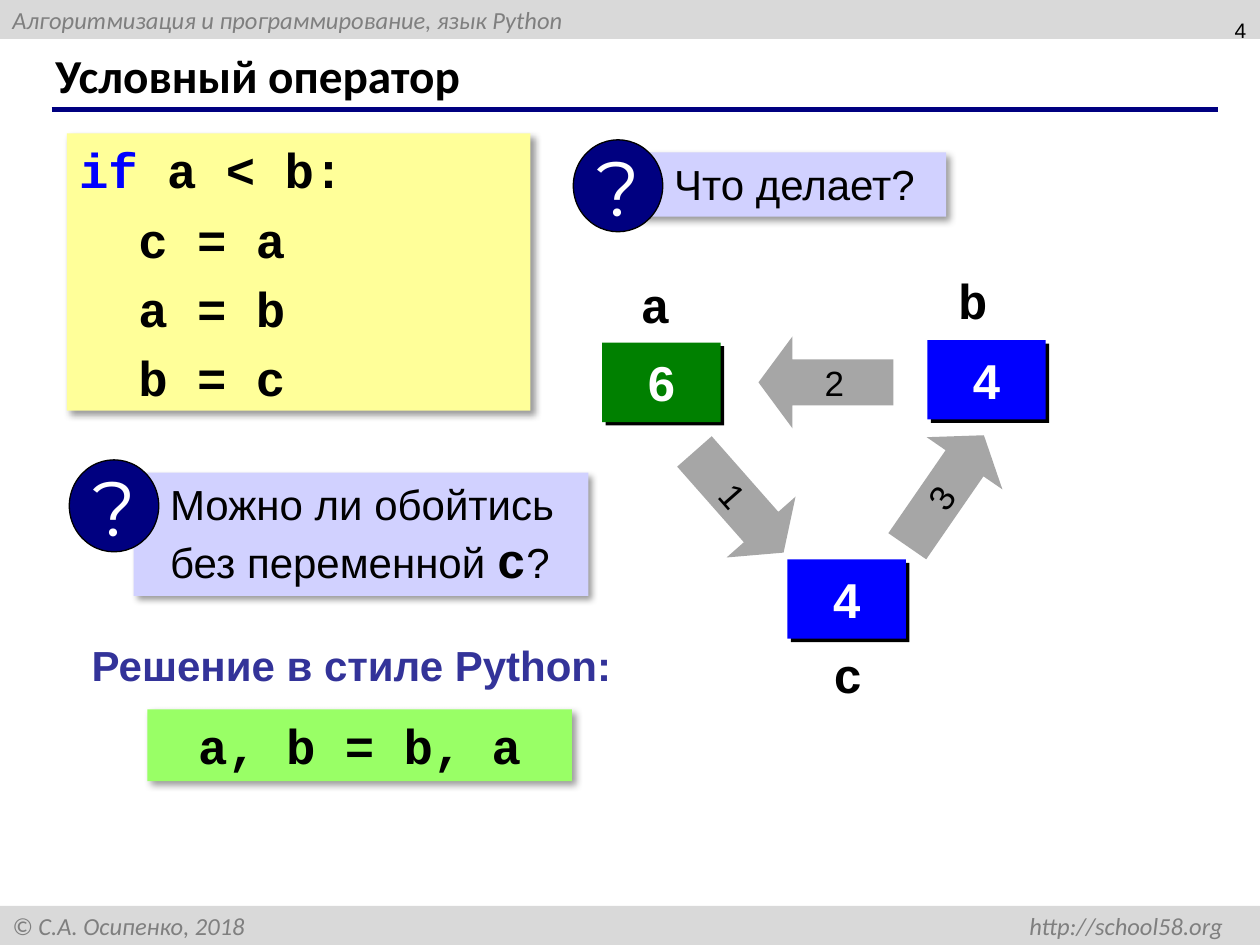
import pptx
import pptx.util
import pptx.dml.color
import pptx.enum.shapes
import pptx.enum.text
import pptx.oxml
import pptx.oxml.ns

Inches = pptx.util.Inches
Kind = pptx.enum.shapes.MSO_SHAPE
Align = pptx.enum.text.PP_ALIGN
Anchor = pptx.enum.text.MSO_ANCHOR
NS = pptx.oxml.ns.nsdecls("a")
HUES = {
    "bar": "D9D9D9", "gray": "7F7F7F", "navy": "000080", "black": "000000",
    "white": "FFFFFF", "yellow": "FFFF99", "blue": "0000FF", "lilac": "D1D1FF",
    "green": "008000", "arrow": "A6A6A6", "lime": "99FF66", "indigo": "333399",
}
SOFT = dict(alpha=40, blur=4, dist=3)
HARD = dict(alpha=100, blur=0, dist=2.8)
CODE = dict(font="Courier New", size=28, bold=True)


def hue(name):
    """Return the named colour."""
    return pptx.dml.color.RGBColor.from_string(HUES[name])


def shade(shape, alpha, blur, dist):
    """Give a shape an outer shadow towards the lower right."""
    shape._element.spPr.find(pptx.oxml.ns.qn("a:effectLst")).append(pptx.oxml.parse_xml(
        f'<a:outerShdw {NS} blurRad="{pptx.util.Pt(blur)}" dist="{pptx.util.Pt(dist)}" '
        f'dir="2700000" algn="tl" rotWithShape="0"><a:srgbClr val="{HUES["black"]}">'
        f'<a:alpha val="{alpha * 1000}"/></a:srgbClr></a:outerShdw>'))


def form(shapes, kind, box, fill, line=None, cast=None):
    """Add a filled preset shape."""
    shape = shapes.add_shape(kind, *map(Inches, box))
    shape.shadow.inherit = False
    shape.fill.solid()
    shape.fill.fore_color.rgb = hue(fill)
    if line:
        shape.line.color.rgb = hue(line)
        shape.line.width = pptx.util.Pt(0.75)
    else:
        shape.line.fill.background()
    if cast:
        shade(shape, **cast)
    return shape


def write(shape, rows, font="Arial", size=24, color="black", bold=False, italic=False,
          align=Align.LEFT, anchor=Anchor.MIDDLE, wrap=True, left=0.1, before=0):
    """Fill a shape with rows; a row is a string or a list of (text, changes)."""
    frame = shape.text_frame
    frame.word_wrap = wrap
    frame.vertical_anchor = anchor
    frame.margin_left = Inches(left)
    for i, row in enumerate(rows):
        para = frame.paragraphs[0] if i == 0 else frame.add_paragraph()
        para.alignment = align
        para.space_before = pptx.util.Pt(before)
        for text, diff in [(row, {})] if isinstance(row, str) else row:
            look = dict(font=font, size=size, color=color, bold=bold) | diff
            run = para.add_run()
            run.text = text
            run.font.name = look["font"]
            run.font.size = pptx.util.Pt(look["size"])
            run.font.color.rgb = hue(look["color"])
            run.font.bold = look["bold"]
            run.font.italic = italic
    return frame


def label(shapes, box, text, **fmt):
    """Add a text box with one row."""
    write(shapes.add_textbox(*map(Inches, box)), [text], **fmt)


def band(shapes, box, text, tab=None):
    """Draw a gray strip with slanted text and an optional right tab stop."""
    frame = write(form(shapes, Kind.RECTANGLE, box, "bar"), [text],
                  font="Calibri", size=14, color="gray", italic=True)
    if tab:
        frame.paragraphs[0]._p.get_or_add_pPr().append(pptx.oxml.parse_xml(
            f'<a:tabLst {NS}><a:tab pos="{Inches(tab)}" algn="r"/></a:tabLst>'))


def head(slide, box):
    """Place the title and the rule beneath it."""
    x, y, w, h = box
    title = slide.shapes.title
    title.left, title.top, title.width, title.height = map(Inches, box)
    write(title, ["Условный оператор"], font="Calibri", size=27, bold=True)
    rule = slide.shapes.add_connector(
        pptx.enum.shapes.MSO_CONNECTOR.STRAIGHT, Inches(x + 0.07), Inches(y + h + 0.02),
        Inches(x + w + 0.17), Inches(y + h + 0.02))
    rule.line.color.rgb = hue("navy")
    rule.line.width = pptx.util.Pt(3)
    rule._element.spPr.append(pptx.oxml.parse_xml(f"<a:effectLst {NS}/>"))


def code(shapes, box):
    """Draw the panel with the conditional swap."""
    rows = [[("if", {"color": "blue"}), (" a < b:", {})], "с = a", "a = b", "b = c"]
    frame = write(form(shapes, Kind.RECTANGLE, box, "yellow", cast=SOFT), rows,
                  anchor=Anchor.TOP, before=6, **CODE)
    for para in frame.paragraphs[1:]:
        para._p.get_or_add_pPr().set("marL", str(Inches(0.47)))


def query(shapes, box, rows):
    """Draw a question panel with a round badge at its upper left."""
    x, y, w, h = box
    group = shapes.add_group_shape().shapes
    panel = form(group, Kind.RECTANGLE, box, "lilac", cast=SOFT)
    frame = write(panel, rows, anchor=Anchor.TOP, left=0.29)
    frame.paragraphs[0].space_before = pptx.util.Pt(2.4)
    badge = form(group, Kind.OVAL, (x - 0.51, y - 0.1, 0.71, 0.73), "navy", "black")
    write(badge, ["?"], font="Montserrat", size=44, color="white",
          align=Align.CENTER, wrap=False)


def swap(shapes, box):
    """Draw three variables and the numbered arrows between them."""
    x, y = box[:2]
    mid = dict(align=Align.CENTER, wrap=False)
    cells = [("c", "4", "blue", 1.47, 2.34, 0.22, 0.63),
             ("a", "6", "green", 0, 0.62, 0.16, -0.59),
             ("b", "4", "blue", 2.58, 0.6, 0.1, -0.6)]
    for name, value, fill, dx, dy, nx, ny in cells:
        cell = form(shapes, Kind.RECTANGLE, (x + dx, y + dy, 0.94, 0.63), fill, cast=HARD)
        write(cell, [value], size=28, color="white", bold=True, **mid)
        label(shapes, (x + dx + nx, y + dy + ny, 0.52, 0.56), name, **CODE, **mid)
    steps = [("1", Kind.RIGHT_ARROW, 0.55, 1.52, 48.6),
             ("2", Kind.LEFT_ARROW, 1.24, 0.57, 0),
             ("3", Kind.RIGHT_ARROW, 2.19, 1.43, 304.6)]
    for text, kind, dx, dy, turn in steps:
        arrow = form(shapes, kind, (x + dx, y + dy, 1.07, 0.73), "arrow")
        arrow.adjustments[0], arrow.adjustments[1] = 0.5, 0.37
        arrow.rotation = turn
        write(arrow, [text], size=20, **mid)


def answer(shapes, box):
    """Place the short solution under its heading."""
    x, y, w, h = box
    label(shapes, (x, y, w, 0.5), "Решение в стиле Python:", color="indigo",
          bold=True, wrap=False, anchor=Anchor.TOP)
    panel = form(shapes, Kind.RECTANGLE, (x + 0.54, y + 0.6, 3.37, h - 0.6), "lime", cast=SOFT)
    write(panel, ["a, b = b, a"], align=Align.CENTER, anchor=Anchor.TOP, before=6, **CODE)


def main():
    """Build the slide and save it."""
    deck = pptx.Presentation()
    deck.slide_width, deck.slide_height = Inches(10), Inches(7.5)
    slide = deck.slides.add_slide(deck.slide_layouts[5])
    shapes = slide.shapes
    band(shapes, (0, 0, 10, 0.31), "Алгоритмизация и программирование, язык Python")
    band(shapes, (0, 7.19, 10, 0.31), "© С.А. Осипенко, 2018 \thttp://school58.org", tab=9.61)
    head(slide, (0.34, 0.33, 9.16, 0.52))
    label(shapes, (7.66, 0, 2.33, 0.48), "4", size=12, align=Align.RIGHT)
    code(shapes, (0.53, 1.06, 3.68, 2.2))
    query(shapes, (5.06, 1.21, 2.45, 0.51), ["Что делает?"])
    swap(shapes, (4.78, 2.1, 3.52, 3.53))
    query(shapes, (1.06, 3.75, 3.61, 0.98),
          ["Можно ли обойтись", [("без переменной ", {}), ("c", CODE), ("?", {})]])
    answer(shapes, (0.63, 5.03, 4.36, 1.17))
    deck.save("out.pptx")


if __name__ == "__main__":
    main()
